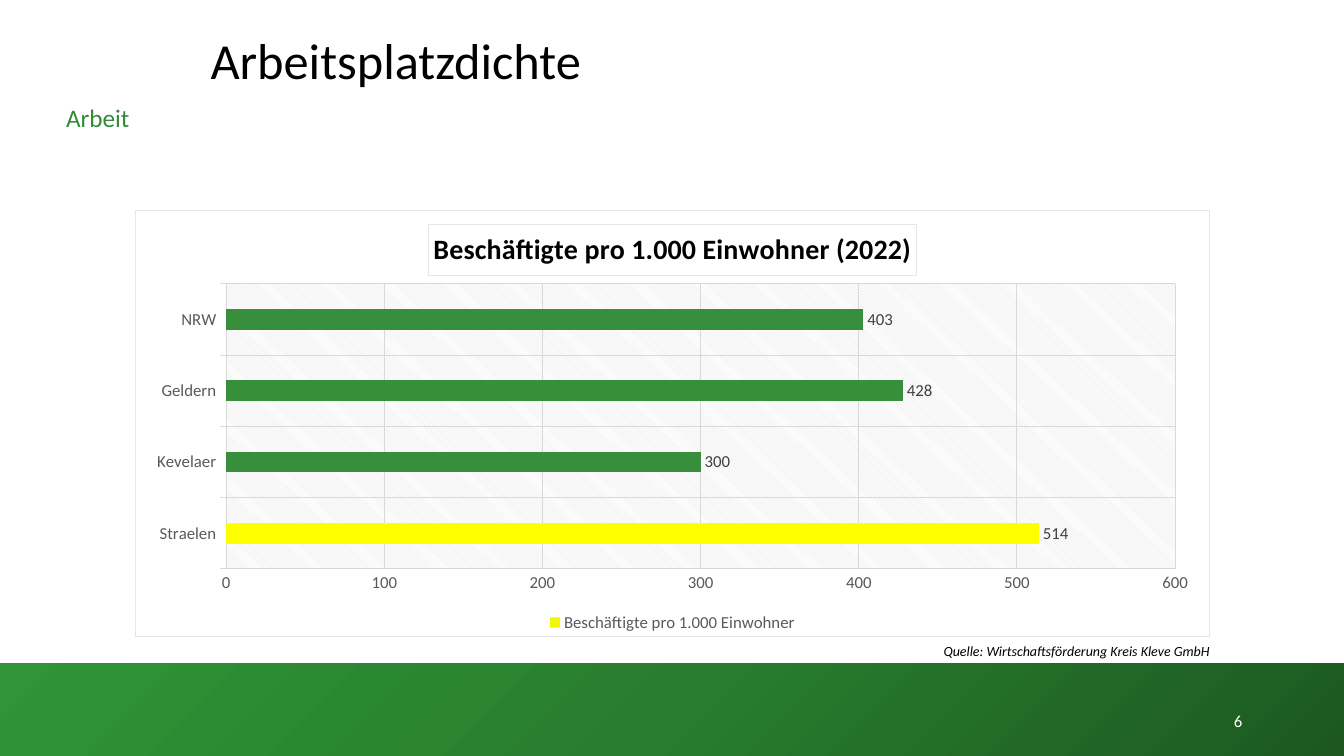
from dataclasses import dataclass

from pptx import Presentation
from pptx.chart.data import CategoryChartData
from pptx.dml.color import RGBColor
from pptx.enum.chart import XL_CHART_TYPE, XL_LABEL_POSITION, XL_LEGEND_POSITION, XL_TICK_MARK
from pptx.enum.shapes import MSO_SHAPE
from pptx.enum.text import MSO_ANCHOR, PP_ALIGN
from pptx.oxml import parse_xml
from pptx.oxml.ns import nsdecls, qn
from pptx.util import Inches, Pt

BAR_CLUSTERED = XL_CHART_TYPE.BAR_CLUSTERED
OUTSIDE_END = XL_LABEL_POSITION.OUTSIDE_END
LEGEND_BOTTOM = XL_LEGEND_POSITION.BOTTOM
TICK_NONE, TICK_OUT = XL_TICK_MARK.NONE, XL_TICK_MARK.OUTSIDE
TOP, MIDDLE = MSO_ANCHOR.TOP, MSO_ANCHOR.MIDDLE
LEFT, CENTER, RIGHT = PP_ALIGN.LEFT, PP_ALIGN.CENTER, PP_ALIGN.RIGHT


@dataclass(frozen=True)
class Theme:
    font: str = "Calibri"
    black: str = "000000"
    white: str = "FFFFFF"
    heading: str = "348939"
    bar: str = "378F3C"
    highlight: str = "FFFF00"
    legend_key: str = "F2F703"
    axis_text: str = "595959"
    label_text: str = "404040"
    grid: str = "D9D9D9"
    border: str = "E7E6E6"
    footer: tuple = ((0, "1C5820"), (50, "287D2E"), (100, "2F9536"))
    title_size: int = 36
    chart_title_size: int = 20
    heading_size: int = 18
    body_size: int = 12
    source_size: int = 10
    hairline: float = 0.75


THEME = Theme()
WIDTH, HEIGHT = 13.33, 7.5
FOOTER_HEIGHT = 0.92

# text, (left, top, width, height), size, colour, alignment, anchor, italic, line spacing, wrap
TEXTS = [
    ("6", (9.42, 6.95, 3, 0.4), THEME.body_size, THEME.white, RIGHT, MIDDLE, False, 1, True),
    ("Arbeitsplatzdichte", (1.99, 0.31, 10.74, 0.87), THEME.title_size, THEME.black,
     LEFT, TOP, False, 0.9, True),
    ("Arbeit", (0.36, 0.97, 1.22, 0.4), THEME.heading_size, THEME.heading,
     CENTER, TOP, False, 1, True),
    ("Quelle: Wirtschaftsförderung Kreis Kleve GmbH", (9.26, 6.33, 3.47, 0.27),
     THEME.source_size, THEME.black, LEFT, TOP, True, 1, False),
]

CHART_TITLE = "Beschäftigte pro 1.000 Einwohner (2022)"
CHART_BOX = (1.34, 2.08, 10.66, 4.24)
SERIES_NAME = "Beschäftigte pro 1.000 Einwohner"
EMPLOYEES = {"Straelen": 514, "Kevelaer": 300, "Geldern": 428, "NRW": 403}
HIGHLIGHTED = "Straelen"
AXIS_MAX, AXIS_STEP = 600, 100


def rgb(code):
    return RGBColor.from_string(code)


def style_font(font, size, color, bold=False, italic=False):
    font.name, font.size = THEME.font, Pt(size)
    font.bold, font.italic = bold, italic
    font.color.rgb = rgb(color)


def style_fill(fill, color):
    fill.solid()
    fill.fore_color.rgb = rgb(color)


def style_line(line, color):
    line.width = Pt(THEME.hairline)
    style_fill(line.fill, color)


def solid_xml(color):
    return f'<a:solidFill><a:srgbClr val="{color}"/></a:solidFill>'


def add_footer(slide):
    band = slide.shapes.add_shape(MSO_SHAPE.RECTANGLE, 0, Inches(HEIGHT - FOOTER_HEIGHT),
                                  Inches(WIDTH), Inches(FOOTER_HEIGHT))
    band.shadow.inherit = False
    band.line.fill.background()
    band.fill.gradient()
    band.fill.gradient_angle = 135
    stops = "".join(f'<a:gs pos="{share * 1000}"><a:srgbClr val="{color}"/></a:gs>'
                    for share, color in THEME.footer)
    gradient = band.element.spPr.find(qn("a:gradFill"))
    gradient.replace(gradient.find(qn("a:gsLst")),
                     parse_xml(f'<a:gsLst {nsdecls("a")}>{stops}</a:gsLst>'))


def add_text(slide, text, box, size, color, alignment, anchor, italic, spacing, wrap):
    frame = slide.shapes.add_textbox(*map(Inches, box)).text_frame
    frame.word_wrap = wrap
    frame.vertical_anchor = anchor
    paragraph = frame.paragraphs[0]
    paragraph.alignment = alignment
    paragraph.line_spacing = spacing
    run = paragraph.add_run()
    run.text = text
    style_font(run.font, size, color, italic=italic)


def style_axis(axis, tick):
    axis.major_tick_mark, axis.minor_tick_mark = tick, TICK_NONE
    axis.has_major_gridlines = True
    style_line(axis.major_gridlines.format.line, THEME.grid)
    style_font(axis.tick_labels.font, THEME.body_size, THEME.axis_text)


def style_areas(chart):
    """Give the chart its border and the plot its hatched background."""
    root = chart.element.find(qn("c:chart"))
    root.addnext(parse_xml(
        f'<c:spPr {nsdecls("c", "a")}>{solid_xml(THEME.white)}'
        f'<a:ln w="{Pt(THEME.hairline)}">{solid_xml(THEME.border)}</a:ln></c:spPr>'))
    root.find(qn("c:plotArea")).append(parse_xml(
        f'<c:spPr {nsdecls("c", "a")}><a:pattFill prst="ltDnDiag">'
        f'<a:fgClr><a:srgbClr val="{THEME.grid}"/></a:fgClr>'
        f'<a:bgClr><a:srgbClr val="{THEME.white}"/></a:bgClr></a:pattFill>'
        '<a:ln><a:noFill/></a:ln></c:spPr>'))


def add_employment_chart(slide):
    data = CategoryChartData()
    data.categories = list(EMPLOYEES)
    data.add_series(SERIES_NAME, list(EMPLOYEES.values()))
    chart = slide.shapes.add_chart(BAR_CLUSTERED, *map(Inches, CHART_BOX), data).chart
    style_font(chart.font, THEME.source_size, THEME.black)

    chart.has_title = True
    run = chart.chart_title.text_frame.paragraphs[0].add_run()
    run.text = CHART_TITLE
    style_font(run.font, THEME.chart_title_size, THEME.black, bold=True)
    chart.chart_title.include_in_layout = False
    style_line(chart.chart_title.format.line, THEME.border)

    chart.has_legend = True
    chart.legend.position = LEGEND_BOTTOM
    chart.legend.include_in_layout = False
    style_font(chart.legend.font, THEME.body_size, THEME.axis_text)

    style_axis(chart.category_axis, TICK_OUT)
    style_line(chart.category_axis.format.line, THEME.grid)
    values = chart.value_axis
    style_axis(values, TICK_NONE)
    values.format.line.fill.background()
    values.minimum_scale, values.maximum_scale, values.major_unit = 0, AXIS_MAX, AXIS_STEP

    plot = chart.plots[0]
    plot.gap_width, plot.overlap, plot.vary_by_categories = 247, -20, False
    series = plot.series[0]
    series.invert_if_negative = False
    style_fill(series.format.fill, THEME.legend_key)
    for index, place in enumerate(EMPLOYEES):
        color = THEME.highlight if place == HIGHLIGHTED else THEME.bar
        style_fill(series.points[index].format.fill, color)
    labels = series.data_labels
    labels.show_value = True
    labels.position = OUTSIDE_END
    style_font(labels.font, THEME.body_size, THEME.label_text)
    style_areas(chart)


def main():
    presentation = Presentation()
    presentation.slide_width, presentation.slide_height = Inches(WIDTH), Inches(HEIGHT)
    slide = presentation.slides.add_slide(presentation.slide_layouts[6])
    add_footer(slide)
    add_employment_chart(slide)
    for entry in TEXTS:
        add_text(slide, *entry)
    presentation.save("out.pptx")


if __name__ == "__main__":
    main()
